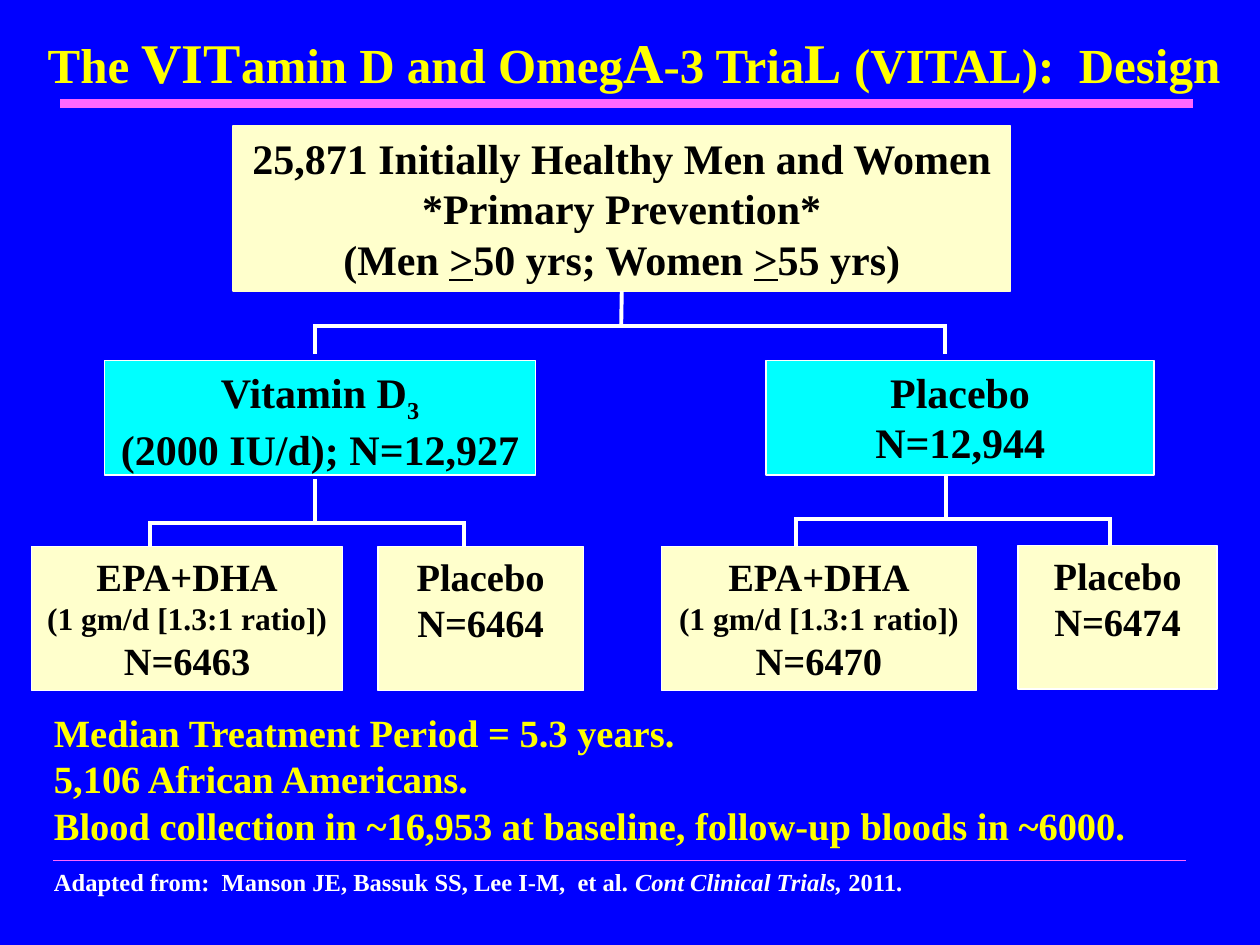
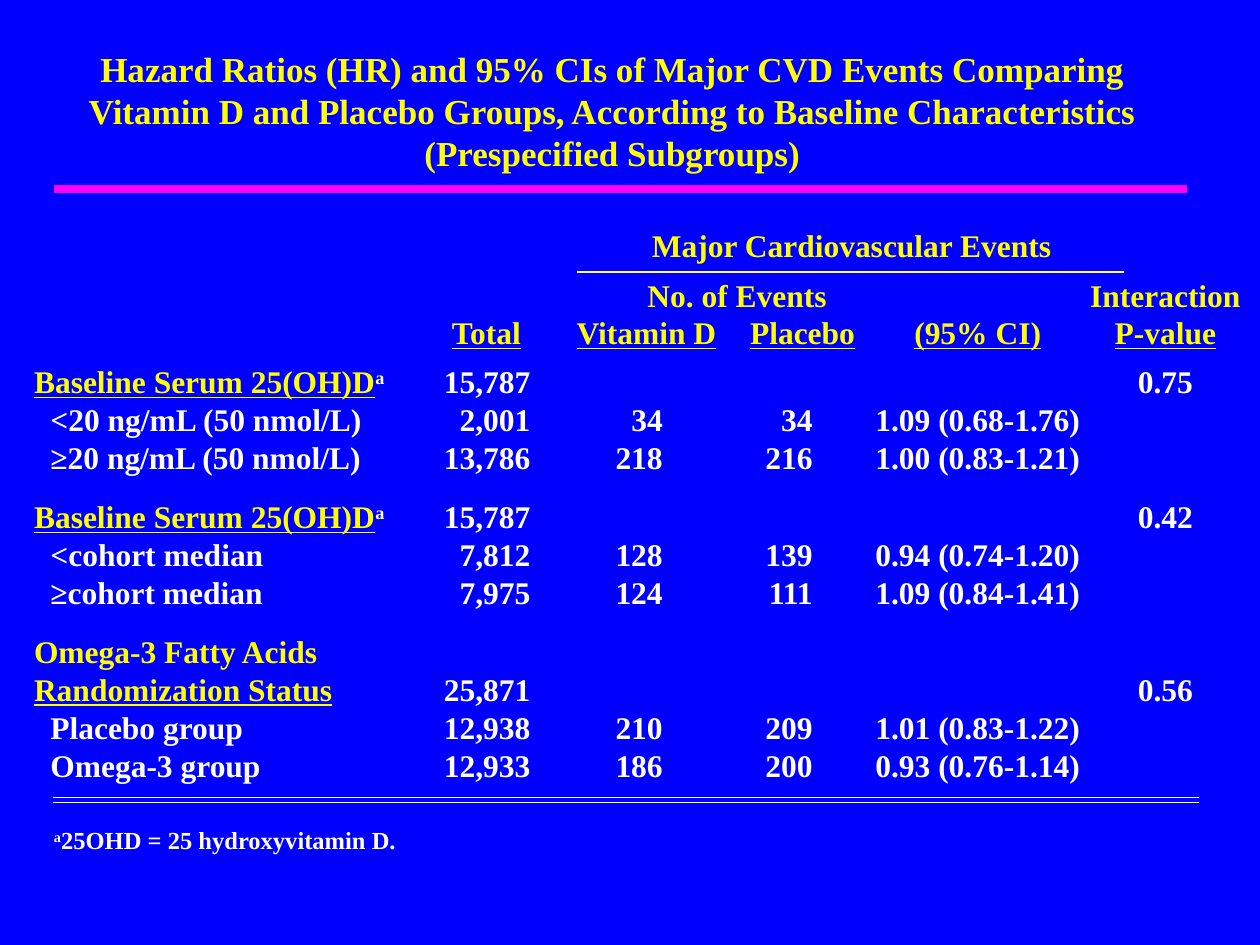
from lxml.etree import SubElement
from pptx import Presentation
from pptx.dml.color import RGBColor
from pptx.enum.shapes import MSO_CONNECTOR as CONNECTOR, MSO_SHAPE as SHAPE
from pptx.enum.text import MSO_ANCHOR as ANCHOR, PP_ALIGN as ALIGN
from pptx.oxml.ns import qn
from pptx.util import Inches, Pt

FONT = "Times New Roman"
BLUE = RGBColor(0x00, 0x00, 0xFF)
YELLOW = RGBColor(0xFF, 0xFF, 0x00)
PALE_YELLOW = RGBColor(0xFF, 0xFF, 0x66)
CREAM = RGBColor(0xFF, 0xFF, 0xCC)
CYAN = RGBColor(0x00, 0xFF, 0xFF)
PINK = RGBColor(0xFF, 0x66, 0xFF)
MAGENTA = RGBColor(0xFF, 0x00, 0xFF)
WHITE = RGBColor(0xFF, 0xFF, 0xFF)
BLACK = RGBColor(0x00, 0x00, 0x00)
NO_GRID_STYLE = "{2D5ABB26-0587-4C30-8999-92F81FD0307C}"


def write(frame, runs, size, color, align=ALIGN.LEFT):
    """Add runs given as (text, {changes}); a newline is a line break."""
    frame.word_wrap = True
    paragraph = frame.paragraphs[0]
    paragraph.alignment = align
    for text, changes in runs:
        for index, piece in enumerate(text.split("\n")):
            if index:
                paragraph.add_line_break()
            if not piece:
                continue
            run = paragraph.add_run()
            run.text = piece
            run.font.name = FONT
            run.font.bold = True
            run.font.size = Pt(changes.get("size", size))
            run.font.color.rgb = changes.get("color", color)
            run.font.underline = changes.get("underline")
            run.font.italic = changes.get("italic")
            if "baseline" in changes:
                run.font._element.set("baseline", str(changes["baseline"] * 1000))


def draw_line(slide, x1, y1, x2, y2, color=WHITE, width=2.25):
    line = slide.shapes.add_connector(
        CONNECTOR.STRAIGHT, Inches(x1), Inches(y1), Inches(x2), Inches(y2))
    line.line.color.rgb = color
    line.line.width = Pt(width)
    SubElement(line._element.spPr, qn("a:effectLst"))
    return line


prs = Presentation()
prs.slide_width, prs.slide_height = Inches(10), Inches(7.5)
design, hazards = [prs.slides.add_slide(prs.slide_layouts[6]) for _ in range(2)]
for slide in (design, hazards):
    slide.background.fill.solid()
    slide.background.fill.fore_color.rgb = BLUE

# Titles, closing remarks and footnotes
big = {"size": 32}
sup = {"baseline": 30}
texts = [
    (design, (0.28, 0.17, 9.58, 0.64), 28, YELLOW, ALIGN.LEFT,
     [("The ", {}), ("VIT", big), ("amin D and Omeg", {}), ("A", big),
      ("-3 Tria", {}), ("L", big), (" (VITAL):  Design", {})]),
    (design, (0.33, 5.58, 9.42, 1.21), 22, YELLOW, ALIGN.LEFT,
     [("Median Treatment Period = 5.3 years.\n5,106 African Americans.\n"
       "Blood collection in ~16,953 at baseline, follow-up bloods in ~6000.", {})]),
    (design, (0.33, 6.83, 7.1, 0.34), 14, WHITE, ALIGN.LEFT,
     [("Adapted from:  Manson JE, Bassuk SS, Lee I-M,  et al. ", {}),
      ("Cont Clinical Trials,", {"italic": True}), (" 2011.", {})]),
    (hazards, (0.36, 0.33, 9, 1.11), 20, YELLOW, ALIGN.CENTER,
     [("Hazard Ratios (HR) and 95% CIs of Major CVD Events Comparing Vitamin D "
       "and Placebo Groups, According to Baseline Characteristics "
       "(Prespecified Subgroups)", {})]),
    (hazards, (0.33, 6.5, 3.08, 0.34), 14, WHITE, ALIGN.LEFT,
     [("a", sup), ("25OHD = 25 hydroxyvitamin D.", {})]),
]
for slide, place, size, color, align, runs in texts:
    box = slide.shapes.add_textbox(*map(Inches, place))
    write(box.text_frame, runs, size, color, align)

# Rules
draw_line(design, 0.48, 0.82, 9.47, 0.82, PINK, 5)
draw_line(design, 0.42, 6.83, 9.41, 6.83, PINK, 1)
draw_line(hazards, 0.43, 1.5, 9.42, 1.5, MAGENTA, 5)
draw_line(hazards, 4.58, 2.16, 8.92, 2.16, PALE_YELLOW, 1.5)
for y in (6.33, 6.37):
    draw_line(hazards, 0.42, y, 9.52, y, WHITE, 1)

# Forks of the trial tree: left, right, bar height, foot of the arms
for left, right, bar, foot in [(2.5, 7.5, 2.59, 2.81),
                               (1.19, 3.68, 4.15, 4.39),
                               (6.32, 8.81, 4.12, 4.39)]:
    draw_line(design, left - 0.015, bar, right + 0.015, bar)
    for arm in (left, right):
        draw_line(design, arm, bar, arm, foot)
draw_line(design, 2.5, 3.8, 2.5, 4.15)
draw_line(design, 7.51, 3.77, 7.51, 4.12)

# Groups of the trial tree
under = {"underline": True}
dose = ("(1 gm/d [1.3:1 ratio])\n", {"size": 18})
groups = [
    ((0.83, 2.86, 3.42, 0.91), CYAN, WHITE, 24,
     [("Vitamin D", {}), ("3", {"baseline": -25}), ("\n(2000 IU/d); N=12,927", {})]),
    ((6.08, 2.86, 3.08, 0.91), CYAN, WHITE, 24, [("Placebo\nN=12,944", {})]),
    ((0.25, 4.34, 2.47, 1.14), CREAM, WHITE, 22,
     [("EPA+DHA\n", {}), dose, ("N=6463", {})]),
    ((3, 4.34, 1.63, 1.14), CREAM, WHITE, 22, [("Placebo\nN=6464", {})]),
    ((5.25, 4.34, 2.5, 1.14), CREAM, WHITE, 22,
     [("EPA+DHA\n", {}), dose, ("N=6470", {})]),
    ((8.08, 4.33, 1.58, 1.14), CREAM, WHITE, 22, [("Placebo\nN=6474", {})]),
    ((1.85, 1, 6.17, 1.31), CREAM, CREAM, 24,
     [("25,871 Initially Healthy Men and Women\n*Primary Prevention*\n(Men ", {}),
      (">", under), ("50 yrs; Women ", {}), (">", under), ("55 yrs)", {})]),
]
for place, fill, outline, size, runs in groups:
    group = design.shapes.add_shape(SHAPE.RECTANGLE, *map(Inches, place))
    group.shadow.inherit = False
    group.fill.solid()
    group.fill.fore_color.rgb = fill
    group.line.color.rgb = outline
    group.line.width = Pt(0.75)
    group.text_frame.vertical_anchor = ANCHOR.TOP
    write(group.text_frame, runs, size, BLACK, ALIGN.CENTER)
cohort = group  # the last group is the root of the tree
stem = draw_line(design, 4.93, 2.31, 4.93, 2.59)
stem.begin_connect(cohort, 2)

# Subgroup table
serum = [("Baseline Serum 25(OH)D", {"color": YELLOW, "underline": True}), ("a", sup)]
omega = [("Omega-3 Fatty Acids", {"color": YELLOW})]
status = [("Randomization Status", {"color": YELLOW, "underline": True})]
rows = [
    ["", "", "Major Cardiovascular Events", "", "", ""],
    ["", "", "No. of Events", "", "", "Interaction"],
    ["", "Total", "Vitamin D", "Placebo", "(95% CI)", "P-value"],
    [serum, "15,787", "", "", "", "0.75"],
    ["<20 ng/mL (50 nmol/L)", "2,001", "34", "34", "1.09 (0.68-1.76)", ""],
    ["≥20 ng/mL (50 nmol/L)", "13,786", "218", "216", "1.00 (0.83-1.21)", ""],
    [serum, "15,787", "", "", "", "0.42"],
    ["<cohort median", "7,812", "128", "139", "0.94 (0.74-1.20)", ""],
    ["≥cohort median", "7,975", "124", "111", "1.09 (0.84-1.41)", ""],
    [omega, "", "", "", "", ""],
    [status, "25,871", "", "", "", "0.56"],
    ["Placebo group", "12,938", "210", "209", "1.01 (0.83-1.22)", ""],
    ["Omega-3 group", "12,933", "186", "200", "0.93 (0.76-1.14)", ""],
]
HEADER_ROWS = 3
widths = [3, 1.18, 1.36, 1.12, 1.66, 1.32]
number_insets = {1: 0.24, 2: 0.55, 3: 0.48}  # right margins of the counts
line_height = 0.3
extra_space = {1: 0.09, 3: 0.09, 6: 0.17, 9: 0.17}
heights = [line_height + extra_space.get(r, 0) for r in range(len(rows))]

frame = hazards.shapes.add_table(
    len(rows), len(widths), Inches(0.27), Inches(1.8),
    Inches(sum(widths)), Inches(sum(heights)))
subgroups = frame.table
subgroups.first_row = subgroups.horz_banding = False
subgroups._tbl.tblPr.find(qn("a:tableStyleId")).text = NO_GRID_STYLE
for column, width in zip(subgroups.columns, widths):
    column.width = Inches(width)

for r, (row, height) in enumerate(zip(rows, heights)):
    subgroups.rows[r].height = Inches(height)
    for c, content in enumerate(row):
        cell = subgroups.cell(r, c)
        cell.fill.background()
        cell.margin_left = cell.margin_right = 0
        cell.margin_top = cell.margin_bottom = 0
        cell.vertical_anchor = ANCHOR.BOTTOM
        if not content:
            # Keep empty cells from stretching the row
            SubElement(cell.text_frame.paragraphs[0]._p, qn("a:endParaRPr"), sz="1200")
            continue
        color, align, changes = WHITE, ALIGN.CENTER, {}
        if r < HEADER_ROWS:
            color = YELLOW
            changes = {"underline": r == HEADER_ROWS - 1}
        elif c == 0:
            align = ALIGN.LEFT
            if isinstance(content, str):
                cell.margin_left = Inches(0.13)
        elif c in number_insets:
            align = ALIGN.RIGHT
            cell.margin_right = Inches(number_insets[c])
        runs = [(content, changes)] if isinstance(content, str) else content
        write(cell.text_frame, runs, 18, color, align)

# Spanning headings, shifted towards the columns they cover
for r, last, shift in [(0, 4, 0.48), (1, 3, 0.32)]:
    subgroups.cell(r, 2).merge(subgroups.cell(r, last))
    subgroups.cell(r, 2).margin_left = Inches(shift)

prs.save("out.pptx")
